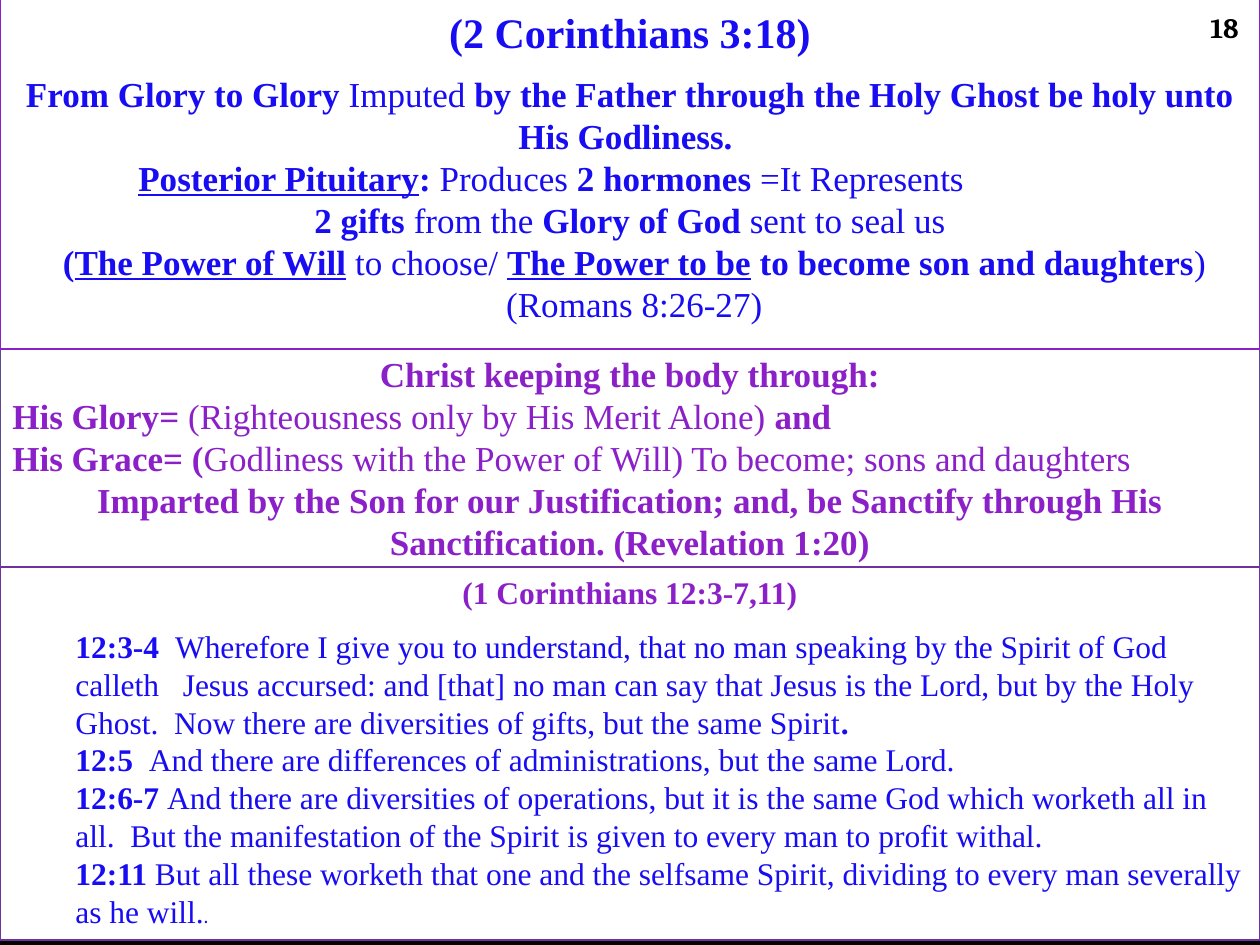
import pptx
import pptx.dml.color
import pptx.enum.text
import pptx.enum.shapes
import pptx.util

Cm = pptx.util.Cm
Pt = pptx.util.Pt
ALIGN = pptx.enum.text.PP_ALIGN
ANCHOR = pptx.enum.text.MSO_ANCHOR
BLUE, PURPLE, WHITE, BLACK = "170CF2", "8C20C8", "FFFFFF", "000000"
SERIF, CAPTION = "Times New Roman", "Cambria"
WIDTH = 25.4


def colour(hex_text):
    return pptx.dml.color.RGBColor.from_string(hex_text)


class StudySlide:
    """Draws bordered text panels on one slide; *...* marks bold and _..._ underline."""

    def __init__(self, deck):
        self.slide = deck.slides.add_slide(deck.slide_layouts[6])
        self.slide.background.fill.solid()
        self.slide.background.fill.fore_color.rgb = colour(BLACK)

    def panel(self, top, height, border, weight, anchor=ANCHOR.TOP):
        panel = self.slide.shapes.add_shape(
            pptx.enum.shapes.MSO_SHAPE.RECTANGLE, Cm(0), Cm(top), Cm(WIDTH), Cm(height))
        panel.shadow.inherit = False
        panel.fill.solid()
        panel.fill.fore_color.rgb = colour(WHITE)
        panel.line.color.rgb = colour(border)
        panel.line.width = Pt(weight)
        frame = panel.text_frame
        frame.word_wrap = True
        frame.auto_size = pptx.enum.text.MSO_AUTO_SIZE.SHAPE_TO_FIT_TEXT
        frame.vertical_anchor = anchor
        return frame

    def line(self, frame, text, size, ink, align=ALIGN.CENTER, indent=0, after=0, face=SERIF):
        line = frame.paragraphs[0] if not frame.text else frame.add_paragraph()
        line.alignment = align
        line.space_after = Pt(after)
        line.font.size = Pt(size)
        line.font.name = face
        line.font.color.rgb = colour(ink)
        if indent:
            line._p.get_or_add_pPr().set("marL", str(Cm(indent)))
        for bold_index, stretch in enumerate(text.split("*")):
            for underline_index, words in enumerate(stretch.split("_")):
                if words:
                    run = line.add_run()
                    run.text = words
                    run.font.bold = bold_index % 2 == 1
                    run.font.underline = underline_index % 2 == 1
        return line

    def page_number(self, number):
        box = self.slide.shapes.add_textbox(Cm(24.13), Cm(0), Cm(0.84), Cm(1.02))
        frame = box.text_frame
        frame.word_wrap = True
        frame.margin_left = frame.margin_right = 0
        frame.vertical_anchor = ANCHOR.BOTTOM
        self.line(frame, f"*{number}*", 16, BLACK, ALIGN.RIGHT, face=CAPTION)


def main():
    deck = pptx.Presentation()
    deck.slide_width, deck.slide_height = Cm(WIDTH), Cm(19.05)
    study = StudySlide(deck)

    keeping = study.panel(6.99, 4.52, "5A4A96", 0.75)
    for text, align in (
        ("*Christ keeping the body through:*", ALIGN.CENTER),
        ("*His Glory= *(Righteousness only by His Merit Alone)* and*", ALIGN.LEFT),
        ("*His Grace= (*Godliness with the Power of Will) To become; sons and daughters", ALIGN.LEFT),
        ("*Imparted by the Son for our Justification; and, be Sanctify through His "
         "Sanctification. (Revelation 1:20)*", ALIGN.CENTER),
    ):
        study.line(keeping, text, 20, PURPLE, align)

    gifts = study.panel(11.43, 7.52, "7030A0", 1.5)
    study.line(gifts, "*(1 Corinthians 12:3-7,11)*", 18, PURPLE, after=9.2)
    for verse in (
        "*12:3-4  *Wherefore I give you to understand, that no man speaking by the Spirit of God "
        "calleth   Jesus accursed: and [that] no man can say that Jesus is the Lord, but by the "
        "Holy Ghost.  Now there are diversities of gifts, but the same Spirit*.*",
        "*12:5  *And there are differences of administrations, but the same Lord.",
        "*12:6-7 *And there are diversities of operations, but it is the same God which worketh "
        "all in all.  But the manifestation of the Spirit is given to every man to profit withal.",
        "*12:11 *But all these worketh that one and the selfsame Spirit, dividing to every man severally",
        "as he will.",
    ):
        last_verse = study.line(gifts, verse, 18, BLUE, ALIGN.LEFT, indent=1.27)
    full_stop = last_verse.add_run()
    full_stop.text = "."
    full_stop.font.size = Pt(12)
    full_stop.font.name = CAPTION

    glory = study.panel(-0.05, 7.09, PURPLE, 0.75, ANCHOR.MIDDLE)
    glory.margin_bottom = Cm(0.45)
    study.line(glory, "*(2 Corinthians 3:18)*", 24, BLUE, after=9.2)
    for text, align, indent in (
        ("*From Glory to Glory *Imputed* by the Father through the Holy Ghost be holy unto "
         "His Godliness. *", ALIGN.CENTER, 0),
        ("*_Posterior Pituitary_:* Produces *2 hormones *=It Represents", ALIGN.LEFT, 2.54),
        (" *2 gifts *from the *Glory of God *sent to seal us ", ALIGN.CENTER, 0),
        (" *(_The Power of Will_ *to choose/ *_The Power to be_ to become son and daughters*)",
         ALIGN.CENTER, 0),
        (" (Romans 8:26-27)", ALIGN.CENTER, 0),
    ):
        study.line(glory, text, 20, BLUE, align, indent)

    study.page_number(18)
    deck.save("out.pptx")


if __name__ == "__main__":
    main()
